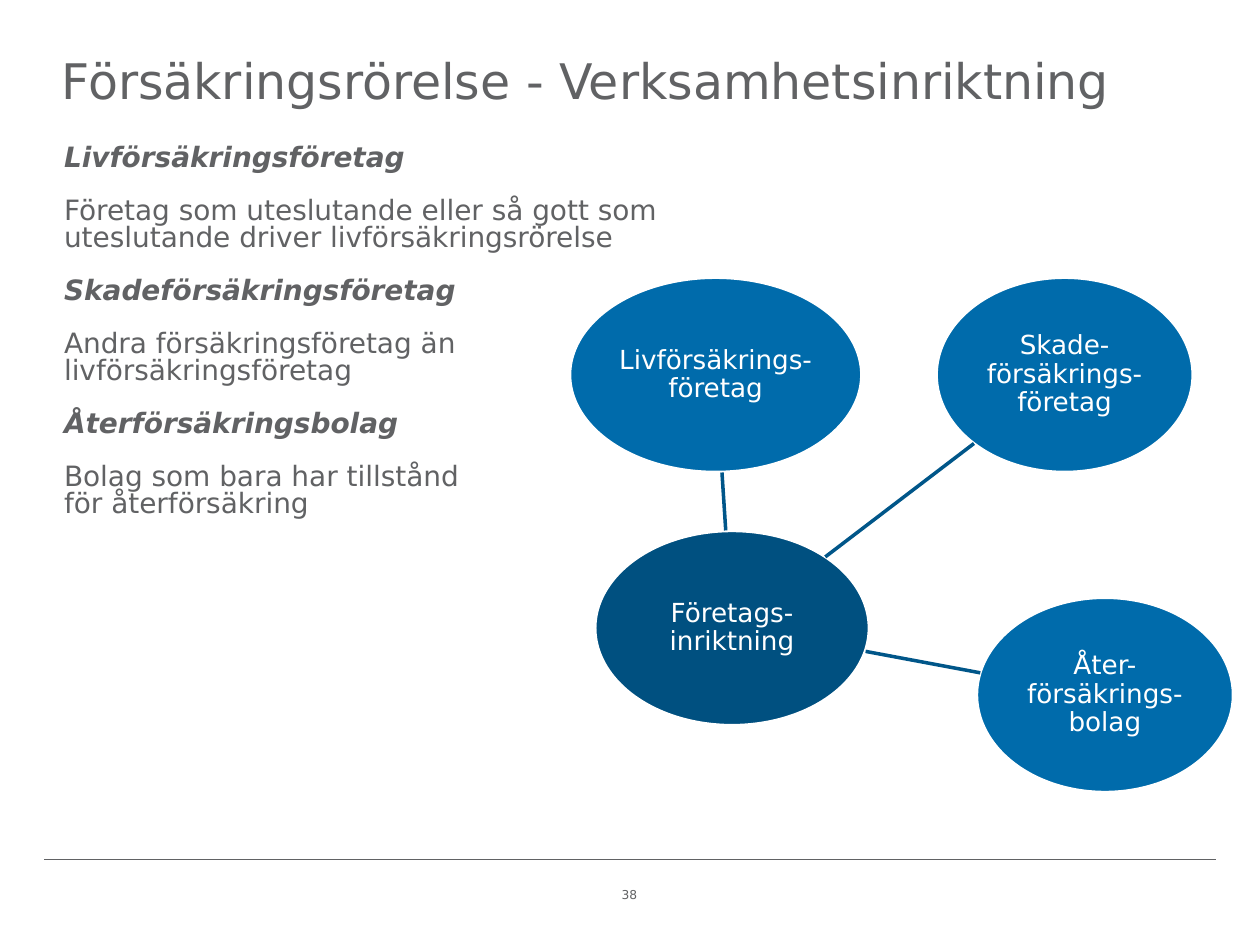
from lxml import etree
from pptx import Presentation
from pptx import util as u
from pptx.dml.color import RGBColor
from pptx.enum import shapes, text
from pptx.oxml.ns import qn

COLUMNS, ROWS = 100, 75
CELL = u.Inches(0.1)
FONT = "DejaVu Sans"
COLORS = {
    "text": "616264",
    "hub": "005080",
    "branch": "006BAB",
    "link": "005689",
    "white": "FFFFFF",
}
MARGINS = ("margin_left", "margin_top", "margin_right", "margin_bottom")
DEFINITIONS = [
    ("Livförsäkringsföretag",
     "Företag som uteslutande eller så gott som uteslutande driver livförsäkringsrörelse"),
    ("Skadeförsäkringsföretag",
     "Andra försäkringsföretag än \vlivförsäkringsföretag"),
    ("Återförsäkringsbolag",
     "Bolag som bara har tillstånd \vför återförsäkring"),
]
ELLIPSE_HEIGHT = 15.5
UPPER_ROW = 22
ELLIPSES = [
    ("Företags-inriktning", 47.2, 42.1, 21.8, "hub"),
    ("Livförsäkrings-företag", 45.2, UPPER_ROW, 23.2, "branch"),
    ("Skade-försäkrings-företag", 74.3, UPPER_ROW, 20.4, "branch"),
    ("Åter-försäkrings-bolag", 77.5, 47.4, 20.4, "branch"),
]
LINKS = [
    (57.6, 42.1, 57.3, 37.5),
    (68.7, 51.7, 77.8, 53.4),
    (65.5, 44.2, 77.3, 35.2),
]


def cells(*counts):
    return [round(count * CELL) for count in counts]


def color(name):
    return RGBColor.from_string(COLORS[name])


def apply(target, values):
    for name, value in values.items():
        setattr(target, name, value)


def write(paragraph, words, size, color_name="text", layout=None, **font):
    paragraph.text = words
    apply(paragraph, layout or {})
    apply(paragraph.font, {"name": FONT, "size": u.Pt(size), **font})
    paragraph.font.color.rgb = color(color_name)


def add_text_box(slide, place, margin=None):
    frame = slide.shapes.add_textbox(*cells(*place)).text_frame
    frame.word_wrap = True
    if margin is not None:
        apply(frame, dict.fromkeys(MARGINS, margin))
    return frame


def add_line(slide, ends, color_name, width):
    connector = slide.shapes.add_connector(
        shapes.MSO_CONNECTOR.STRAIGHT, *cells(*ends))
    connector.line.color.rgb = color(color_name)
    connector.line.width = u.Pt(width)
    etree.SubElement(connector._element.spPr, qn("a:effectLst"))


def add_ellipse(slide, words, left, top, width, fill):
    shape = slide.shapes.add_shape(
        shapes.MSO_SHAPE.OVAL, *cells(left, top, width, ELLIPSE_HEIGHT))
    shape.shadow.inherit = False
    shape.fill.solid()
    shape.fill.fore_color.rgb = color(fill)
    shape.line.color.rgb = color("white")
    shape.line.width = u.Pt(2)
    frame = shape.text_frame
    apply(frame, {
        "word_wrap": True,
        "vertical_anchor": text.MSO_ANCHOR.MIDDLE,
        **dict.fromkeys(MARGINS, u.Inches(0.01)),
    })
    write(frame.paragraphs[0], words, 15, "white",
          {"alignment": text.PP_ALIGN.CENTER, "line_spacing": 0.9})


def add_definitions(slide, place):
    frame = add_text_box(slide, place)
    paragraph = frame.paragraphs[0]
    layout = {"line_spacing": 0.8}
    for term, meaning in DEFINITIONS:
        for words, strong in ((term, True), (meaning, False)):
            if paragraph is None:
                paragraph = frame.add_paragraph()
                layout["space_before"] = u.Pt(15)
            write(paragraph, words, 16, layout=layout, bold=strong, italic=strong)
            paragraph = None


def main():
    presentation = Presentation()
    apply(presentation, {"slide_width": COLUMNS * CELL, "slide_height": ROWS * CELL})
    slide = presentation.slides.add_slide(presentation.slide_layouts[6])

    add_line(slide, (3.5, 68.2, COLUMNS - 3.5, 68.2), "text", 0.75)
    title = add_text_box(slide, (4.9, 4, 90, 8.5), margin=0)
    write(title.paragraphs[0], "Försäkringsrörelse - Verksamhetsinriktning", 28)
    number = add_text_box(slide, (43, 69.9, 13.9, 2.8))
    write(number.paragraphs[0], "38", 7, layout={"alignment": text.PP_ALIGN.CENTER})
    add_definitions(slide, (4.1, 11.1, 57.5, 29.3))

    for ellipse in ELLIPSES:
        add_ellipse(slide, *ellipse)
    for ends in LINKS:
        add_line(slide, ends, "link", 2)

    presentation.save("out.pptx")


if __name__ == "__main__":
    main()
